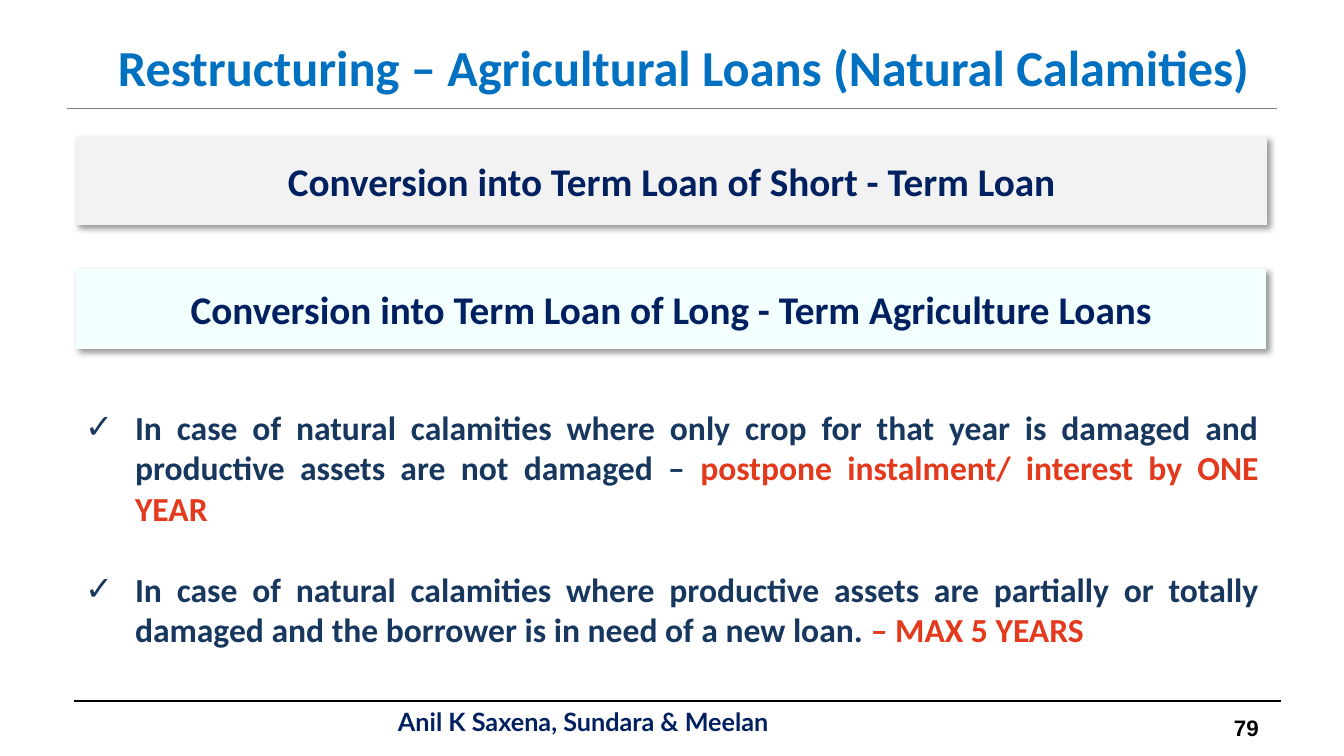
from lxml import etree
from pptx import Presentation
from pptx.dml.color import RGBColor
from pptx.enum.shapes import MSO_CONNECTOR, MSO_SHAPE
from pptx.enum.text import MSO_ANCHOR, MSO_AUTO_SIZE, PP_ALIGN
from pptx.oxml.ns import qn
from pptx.util import Pt

SCALE = 914400 / 100.8
RECT, STRAIGHT = MSO_SHAPE.RECTANGLE, MSO_CONNECTOR.STRAIGHT
TOP, MIDDLE = MSO_ANCHOR.TOP, MSO_ANCHOR.MIDDLE
LEFT, CENTER, JUSTIFY = PP_ALIGN.LEFT, PP_ALIGN.CENTER, PP_ALIGN.JUSTIFY
NO_FIT = MSO_AUTO_SIZE.NONE

COLORS = {
    "title": "0070C0", "navy": "002060", "body": "17375E", "alert": "E3391D",
    "gray": "F2F2F2", "mint": "F3FEFF", "rule": "7F7F7F", "black": "000000",
}
BANNERS = [
    ("Conversion into Term Loan of Short - Term Loan", "gray", (76, 137, 1191, 88)),
    ("Conversion into Term Loan of Long - Term Agriculture Loans", "mint",
     (76, 269, 1190, 80)),
]
POINTS = [
    [("In case of natural calamities where only crop for that year is damaged and "
      "productive assets are not damaged – ", "body"),
     ("postpone instalment/ interest by ONE YEAR", "alert")],
    [("In case of natural calamities where productive assets are partially or totally "
      "damaged and the borrower is in need of a new loan. ", "body"),
     ("– MAX 5 YEARS", "alert")],
]


def px(n):
    return round(n * SCALE)


def rgb(name):
    return RGBColor.from_string(COLORS[name])


def place(shape, box):
    shape.left, shape.top, shape.width, shape.height = map(px, box)


def set_frame(frame, anchor, inset=(0, 0)):
    frame.word_wrap = True
    frame.auto_size = NO_FIT
    frame.vertical_anchor = anchor
    frame.margin_left = frame.margin_right = px(inset[0])
    frame.margin_top = frame.margin_bottom = px(inset[1])


def add_run(para, text, size, color, font="Calibri"):
    run = para.add_run()
    run.text = text
    run.font.size, run.font.bold, run.font.name = Pt(size), True, font
    run.font.color.rgb = rgb(color)


def add_rule(slide, x, y, width, color):
    rule = slide.shapes.add_connector(STRAIGHT, px(x), px(y), px(x + width), px(y))
    rule.line.color.rgb = rgb(color)
    rule.line.width = Pt(0.75)
    etree.SubElement(rule._element.spPr, qn("a:effectLst"))


def add_shadow(shape):
    shape.shadow.inherit = False
    effects = shape._element.spPr.find(qn("a:effectLst"))
    outer = etree.SubElement(effects, qn("a:outerShdw"), blurRad=str(Pt(4)),
                             dist=str(Pt(3)), dir="2700000", algn="tl", rotWithShape="0")
    color = etree.SubElement(outer, qn("a:srgbClr"), val=COLORS["black"])
    etree.SubElement(color, qn("a:alpha"), val="40000")


def add_check(para, indent):
    """Give the paragraph a hanging tick bullet."""
    props = para._p.get_or_add_pPr()
    props.set("marL", str(px(indent)))
    props.set("indent", str(-px(indent)))
    etree.SubElement(props, qn("a:buFont"), typeface="Arial")
    etree.SubElement(props, qn("a:buChar"), char="✓")


def add_title(slide, box):
    title = slide.shapes.title
    place(title, box)
    set_frame(title.text_frame, TOP, (10, 5))
    para = title.text_frame.paragraphs[0]
    para.alignment = CENTER
    add_run(para, "Restructuring – Agricultural Loans (Natural Calamities)", 36, "title")
    add_rule(slide, box[0] - 12, box[1] + 78, 1210, "rule")


def add_banner(slide, text, fill, box):
    banner = slide.shapes.add_shape(RECT, *map(px, box))
    banner.fill.solid()
    banner.fill.fore_color.rgb = rgb(fill)
    banner.line.fill.background()
    add_shadow(banner)
    set_frame(banner.text_frame, MIDDLE)
    para = banner.text_frame.paragraphs[0]
    para.alignment = CENTER
    add_run(para, text, 28, "navy")


def add_points(slide, box):
    body = slide.placeholders[1]
    place(body, box)
    frame = body.text_frame
    set_frame(frame, TOP)
    for i, point in enumerate(POINTS):
        para = frame.add_paragraph() if i else frame.paragraphs[0]
        para.alignment = JUSTIFY
        para.space_before = Pt(29 if i else 0)
        add_check(para, 50)
        for text, color in point:
            add_run(para, text, 24, color)


def add_label(slide, text, size, color, font, anchor, box):
    label = slide.shapes.add_textbox(*map(px, box))
    set_frame(label.text_frame, anchor, (10, 5))
    para = label.text_frame.paragraphs[0]
    para.alignment = LEFT
    add_run(para, text, size, color, font)


def add_footer(slide, box):
    x, y, width, _ = box
    add_rule(slide, x, y, width, "black")
    add_label(slide, "Anil K Saxena, Sundara & Meelan", 18, "navy", "Lato", MIDDLE,
              (x + 314, y + 8, 606, 24))
    add_label(slide, "79", 16, "black", "Arial", TOP, (x + 1150, y + 8, 68, 33))


def main():
    deck = Presentation()
    deck.slide_width, deck.slide_height = px(1344), px(756)
    slide = deck.slides.add_slide(deck.slide_layouts[1])
    add_title(slide, (79, 31, 1210, 85))
    for banner in BANNERS:
        add_banner(slide, *banner)
    add_points(slide, (85, 407, 1174, 285))
    add_footer(slide, (74, 701, 1207, 55))
    deck.save("out.pptx")


if __name__ == "__main__":
    main()
